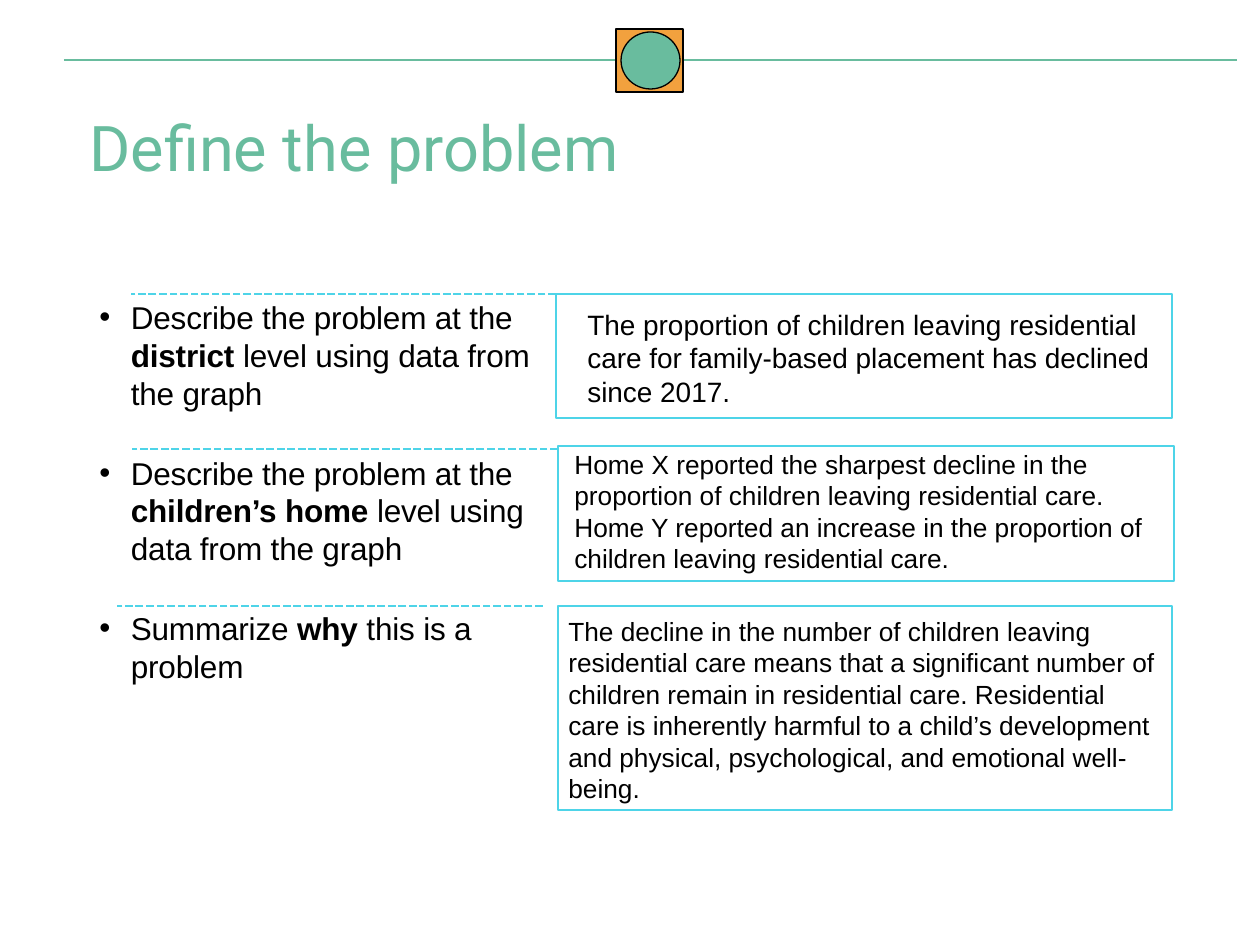
"""Builds the 'Define the problem' slide with three prompts and their answers."""
import lxml.etree
import pptx
import pptx.dml.color
import pptx.enum.dml
import pptx.enum.shapes
import pptx.enum.text
import pptx.oxml.ns
import pptx.util

SCALE = 914400 / 126
THEME = {
    "green": "69BC9E", "orange": "F2A13E", "cyan": "4ED4E8", "black": "000000",
    "title_font": "Roboto", "body_font": "Arial",
    "title_size": 36, "prompt_size": 18, "answer_size": 16, "detail_size": 15,
}
SHAPE = pptx.enum.shapes.MSO_SHAPE
qn = pptx.oxml.ns.qn


def emu(*lengths):
    return [round(length * SCALE) for length in lengths]


def write_text(paragraph, text, *, size, font=THEME["body_font"], color=THEME["black"],
               line_spacing=None, before=0, after=0, bullet=False, tracking=0):
    paragraph.alignment = pptx.enum.text.PP_ALIGN.LEFT
    paragraph.line_spacing = line_spacing or pptx.util.Pt(size * 1.2)
    paragraph.space_before = pptx.util.Pt(before)
    paragraph.space_after = pptx.util.Pt(after)
    if bullet:
        properties = paragraph._p.get_or_add_pPr()
        properties.set("marL", "228600")
        properties.set("indent", "-228600")
        lxml.etree.SubElement(properties, qn("a:buFont")).set("typeface", "Arial")
        lxml.etree.SubElement(properties, qn("a:buChar")).set("char", "•")
    for index, part in enumerate(text.split("**")):
        run = paragraph.add_run()
        run.text = part
        run.font.name = font
        run.font.size = pptx.util.Pt(size)
        run.font.bold = index % 2 == 1
        run.font.color.rgb = pptx.dml.color.RGBColor.from_string(color)
        if tracking:
            run._r.get_or_add_rPr().set("spc", str(tracking))


presentation = pptx.Presentation()
presentation.slide_width, presentation.slide_height = emu(1260, 945)
slide = presentation.slides.add_slide(presentation.slide_layouts[5])

title = slide.shapes.title
title.left, title.top, title.width, title.height = emu(77, 111, 1108, 116)
title.text_frame.word_wrap = True
title.text_frame.auto_size = pptx.enum.text.MSO_AUTO_SIZE.NONE
title.text_frame.vertical_anchor = pptx.enum.text.MSO_ANCHOR.TOP
write_text(title.text_frame.paragraphs[0], "Define the problem", size=THEME["title_size"],
           font=THEME["title_font"], color=THEME["green"], line_spacing=0.9)

answer_frames = [(556, 294, 616, 124), (558, 446, 616, 135), (558, 606, 614, 204)]
rules = [
    ((64, 60, 1237, 60), "green", 0.75, False),
    ((556, 294, 131, 294), "cyan", 1.5, True),
    ((558, 449, 132, 449), "cyan", 1.5, True),
    ((543, 606, 117, 606), "cyan", 1.5, True),
]
for ends, color, weight, dashed in rules:
    connector = slide.shapes.add_connector(
        pptx.enum.shapes.MSO_CONNECTOR.STRAIGHT, *emu(*ends))
    connector.line.color.rgb = pptx.dml.color.RGBColor.from_string(THEME[color])
    connector.line.width = pptx.util.Pt(weight)
    if dashed:
        connector.line.dash_style = pptx.enum.dml.MSO_LINE.SQUARE_DOT
    lxml.etree.SubElement(connector._element.spPr, qn("a:effectLst"))

outlines = [
    (SHAPE.RECTANGLE, (616, 29, 67, 63), "orange", "black", 1),
    (SHAPE.OVAL, (621, 32, 59, 57), "green", "black", 0.75),
]
outlines += [(SHAPE.RECTANGLE, frame, None, "cyan", 1.5) for frame in answer_frames]
for kind, frame, fill, color, weight in outlines:
    shape = slide.shapes.add_shape(kind, *emu(*frame))
    shape.shadow.inherit = False
    if fill:
        shape.fill.solid()
        shape.fill.fore_color.rgb = pptx.dml.color.RGBColor.from_string(THEME[fill])
    else:
        shape.fill.background()
    shape.line.color.rgb = pptx.dml.color.RGBColor.from_string(THEME[color])
    shape.line.width = pptx.util.Pt(weight)

prompts = [
    "Describe the problem at the **district **level using data from the graph",
    "Describe the problem at the **children’s home **level using data from the graph",
    "Summarize **why** this is a problem",
]
prompt_box = slide.shapes.add_textbox(*emu(87, 292, 476, 464))
prompt_box.text_frame.word_wrap = True
for index, prompt in enumerate(prompts):
    paragraph = (prompt_box.text_frame.add_paragraph() if index
                 else prompt_box.text_frame.paragraphs[0])
    write_text(paragraph, prompt, size=THEME["prompt_size"], before=6 if index else 0,
               after=18, bullet=True, tracking=-10)

answers = [
    ((575, 301, 630, 115), "answer_size",
     "The proportion of children leaving residential care for family-based placement "
     "has declined since 2017."),
    ((562, 442, 630, 140), "detail_size",
     "Home X reported the sharpest decline in the proportion of children leaving "
     "residential care. Home Y reported an increase in the proportion of children "
     "leaving residential care."),
    ((556, 609, 616, 204), "detail_size",
     "The decline in the number of children leaving residential care means that a "
     "significant number of children remain in residential care. Residential care is "
     "inherently harmful to a child’s development and physical, psychological, and "
     "emotional well-being."),
]
for frame, size, answer in answers:
    answer_box = slide.shapes.add_textbox(*emu(*frame))
    answer_box.text_frame.word_wrap = True
    write_text(answer_box.text_frame.paragraphs[0], answer, size=THEME[size])

presentation.save("out.pptx")
